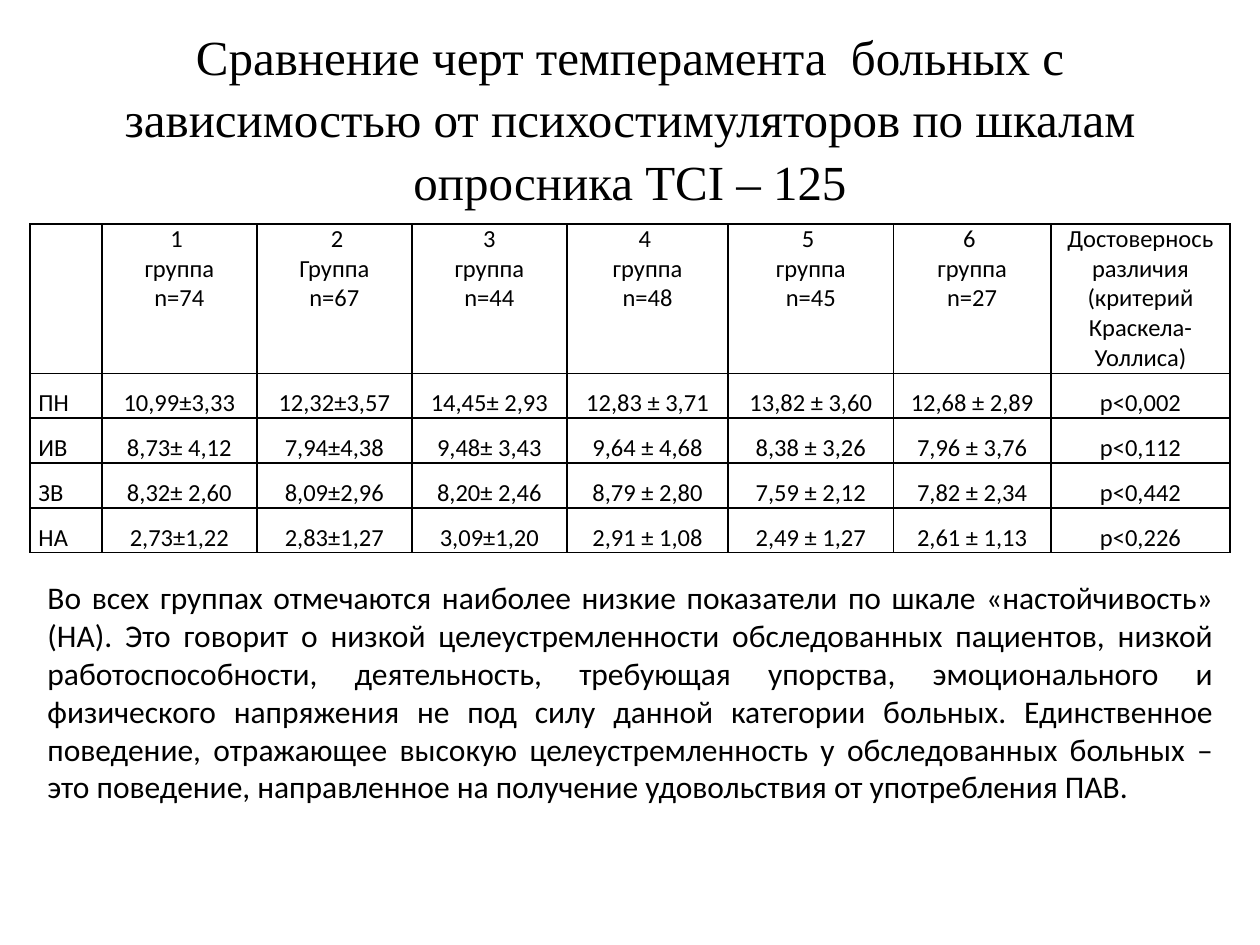
from typing import NamedTuple

from lxml.etree import SubElement
from pptx import Presentation
from pptx.dml.color import RGBColor
from pptx.enum.text import MSO_ANCHOR as Anchor, MSO_AUTO_SIZE as AutoSize, PP_ALIGN as Align
from pptx.oxml.ns import qn
from pptx.util import Pt

BLACK = RGBColor(0x00, 0x00, 0x00)


class Box(NamedTuple):
    left: float
    top: float
    width: float
    height: float

    def lengths(self) -> list:
        return [Pt(value) for value in self]


class ScaleRow(NamedTuple):
    scale: str
    scores: list[str]
    significance: str


TITLE = ("Сравнение черт темперамента  больных с зависимостью "
         "от психостимуляторов по шкалам опросника TCI – 125")
CONCLUSION = (
    "Во всех группах отмечаются наиболее низкие показатели по шкале «настойчивость» (НА). "
    "Это говорит о низкой целеустремленности обследованных пациентов, низкой "
    "работоспособности, деятельность, требующая упорства, эмоционального и физического "
    "напряжения не под силу данной категории больных. Единственное поведение, отражающее "
    "высокую целеустремленность у обследованных больных – это поведение, направленное на "
    "получение удовольствия от употребления ПАВ."
)
HEADERS = [
    "",
    "1 \nгруппа\nn=74",
    " 2\nГруппа\nn=67",
    "3\nгруппа\nn=44",
    "4 \nгруппа\nn=48",
    "5 \nгруппа\nn=45",
    "6 \nгруппа\nn=27",
    "Достовернось\nразличия (критерий Краскела- Уоллиса)",
]
SCALE_ROWS = [
    ScaleRow("ПН", ["10,99±3,33", "12,32±3,57", "14,45± 2,93",
                    "12,83 ± 3,71", "13,82 ± 3,60", "12,68 ± 2,89"], "р<0,002"),
    ScaleRow("ИВ", ["8,73± 4,12", "7,94±4,38", "9,48± 3,43",
                    "9,64 ± 4,68", "8,38 ± 3,26", "7,96 ± 3,76"], "р<0,112"),
    ScaleRow("ЗВ", ["8,32± 2,60", "8,09±2,96", "8,20± 2,46",
                    "8,79 ± 2,80", "7,59 ± 2,12", "7,82 ± 2,34"], "р<0,442"),
    ScaleRow("НА", ["2,73±1,22", "2,83±1,27", "3,09±1,20",
                    "2,91 ± 1,08", "2,49 ± 1,27", "2,61 ± 1,13"], "р<0,226"),
]

TITLE_BOX = Box(36, 21.6, 648, 90)
TABLE_BOX = Box(17, 128, 686, 187.8)
CONCLUSION_BOX = Box(20, 327, 680.5, 138)
COLUMN_WIDTHS = [41.2, 88.6, 88.6, 88.6, 92.2, 94.4, 90, 102.4]
HEADER_HEIGHT = 85.4
ROW_HEIGHT = 25.6


def write_text(frame, text: str, *, size: float, font: str = "Calibri",
               align=Align.CENTER, spacing: float = 1.0) -> None:
    """Fill a text frame, one paragraph for each line of the text."""
    for index, line in enumerate(text.split("\n")):
        paragraph = frame.add_paragraph() if index else frame.paragraphs[0]
        paragraph.alignment = align
        paragraph.line_spacing = spacing
        run = paragraph.add_run()
        run.text = line
        run.font.size = Pt(size)
        run.font.name = font
        run.font.color.rgb = BLACK


def add_text_box(slide, box: Box, text: str, *, anchor=Anchor.TOP,
                 auto_size=AutoSize.NONE, **text_format) -> None:
    frame = slide.shapes.add_textbox(*box.lengths()).text_frame
    frame.word_wrap = True
    frame.auto_size = auto_size
    frame.vertical_anchor = anchor
    write_text(frame, text, **text_format)


def add_borders(cell, width: float = 1) -> None:
    properties = cell._tc.get_or_add_tcPr()
    for index, side in enumerate(("a:lnL", "a:lnR", "a:lnT", "a:lnB")):
        line = SubElement(properties, qn(side), w=str(int(Pt(width))))
        fill = SubElement(line, qn("a:solidFill"))
        SubElement(fill, qn("a:srgbClr"), val=str(BLACK))
        properties.insert(index, line)  # borders come before the fill


def add_scores_table(slide, box: Box) -> None:
    rows = [HEADERS] + [[row.scale, *row.scores, row.significance] for row in SCALE_ROWS]
    table = slide.shapes.add_table(len(rows), len(HEADERS), *box.lengths()).table
    table.first_row = table.horz_banding = False
    for column, width in zip(table.columns, COLUMN_WIDTHS):
        column.width = Pt(width)
    for row_index, texts in enumerate(rows):
        table.rows[row_index].height = Pt(ROW_HEIGHT if row_index else HEADER_HEIGHT)
        for column_index, text in enumerate(texts):
            cell = table.cell(row_index, column_index)
            cell.margin_left = cell.margin_right = Pt(5)
            cell.margin_top = cell.margin_bottom = Pt(0)
            cell.fill.background()
            add_borders(cell)
            if text:
                write_text(cell.text_frame, text, size=14,
                           align=Align.CENTER if column_index else Align.JUSTIFY,
                           spacing=1.5 if row_index else 1.0)


def main() -> None:
    presentation = Presentation()
    presentation.slide_width = Pt(720)
    presentation.slide_height = Pt(540)
    slide = presentation.slides.add_slide(presentation.slide_layouts[6])

    # Title
    add_text_box(slide, TITLE_BOX, TITLE, anchor=Anchor.MIDDLE, size=28,
                 font="Times New Roman", spacing=1.06)
    # Scores by group
    add_scores_table(slide, TABLE_BOX)
    # Conclusion
    add_text_box(slide, CONCLUSION_BOX, CONCLUSION, size=18, align=Align.JUSTIFY,
                 auto_size=AutoSize.SHAPE_TO_FIT_TEXT)

    presentation.save("out.pptx")


if __name__ == "__main__":
    main()
